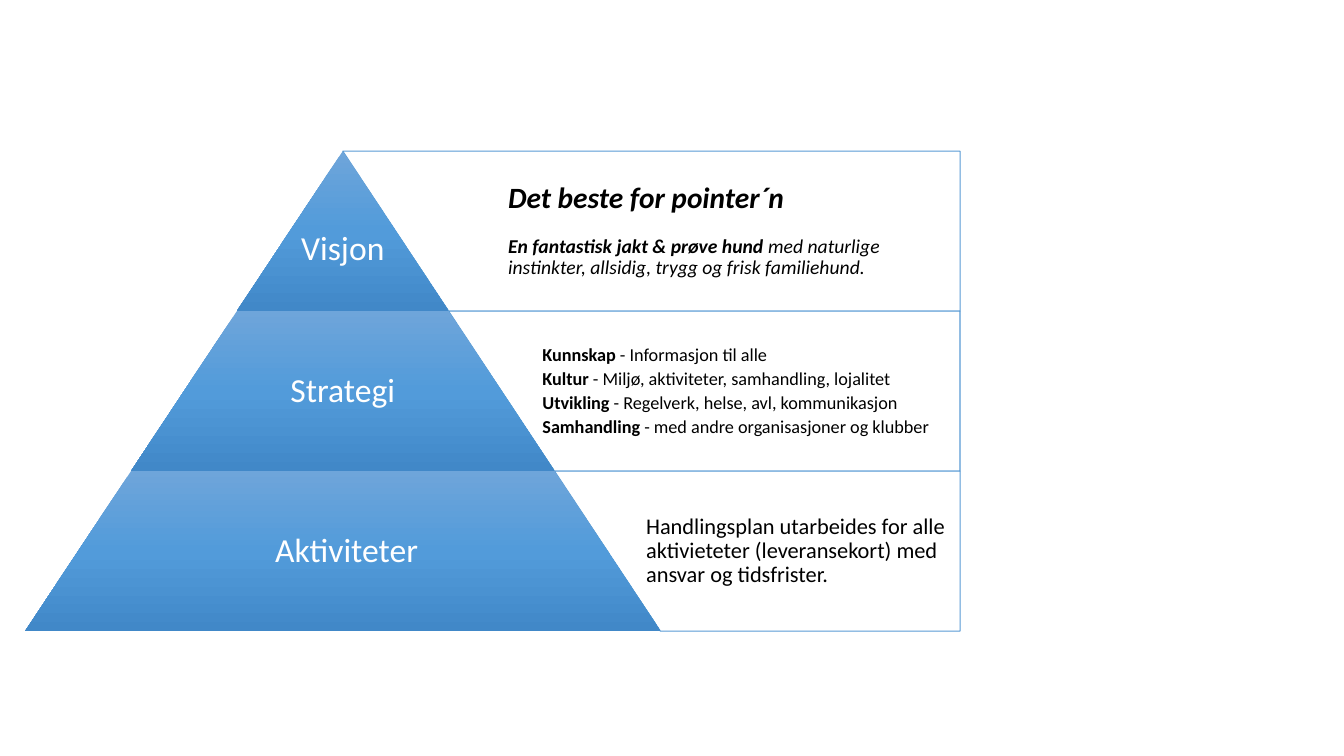
import copy
import dataclasses

import pptx
import pptx.dml.color
import pptx.enum.shapes
import pptx.enum.text
import pptx.oxml
import pptx.oxml.ns
import pptx.util


@dataclasses.dataclass(frozen=True)
class Theme:
    font: str = "Calibri"
    text: str = "000000"
    label: str = "FFFFFF"
    panel: str = "FFFFFF"
    panel_opacity: int = 89
    line: str = "599BD5"
    gradient: tuple = ("6EA5DA", "529BDA", "4188C8")
    label_size: int = 24
    vision_size: int = 21
    vision_detail_size: int = 14
    strategy_size: int = 13
    activity_size: int = 16


THEME = Theme()
LEFT, TOP = 0.25, 1.5
COLUMN, ROW = 1.05, 1.587
APEX = 3
RIGHT = 8.83


def across(columns):
    return pptx.util.Inches(LEFT + columns * COLUMN)


def down(rows):
    return pptx.util.Inches(TOP + rows * ROW)


def color(value):
    return pptx.dml.color.RGBColor.from_string(value)


def add_panel(page, row):
    edge = APEX + row
    builder = page.shapes.build_freeform(across(edge), down(row))
    corners = [(RIGHT, row), (RIGHT, row + 1), (edge + 1, row + 1)]
    builder.add_line_segments([(across(x), down(y)) for x, y in corners], close=True)
    panel = builder.convert_to_shape()
    panel.shadow.inherit = False
    panel.fill.solid()
    panel.fill.fore_color.rgb = color(THEME.panel)
    fill_color = panel._element.spPr.find(".//" + pptx.oxml.ns.qn("a:srgbClr"))
    alpha = fill_color.makeelement(pptx.oxml.ns.qn("a:alpha"), {"val": str(THEME.panel_opacity * 1000)})
    fill_color.append(alpha)
    panel.line.color.rgb = color(THEME.line)
    panel.line.width = pptx.util.Pt(0.75)


def add_tier(page, row):
    left, right = APEX - row - 1, APEX + row + 1
    tier = page.shapes.add_shape(
        pptx.enum.shapes.MSO_SHAPE.TRAPEZOID,
        across(left), down(row), across(right) - across(left), down(row + 1) - down(row),
    )
    tier.adjustments[0] = COLUMN / ROW
    tier.shadow.inherit = False
    tier.line.fill.background()
    tier.fill.gradient()
    tier.fill.gradient_angle = 270
    stop_list = tier._element.spPr.find(".//" + pptx.oxml.ns.qn("a:gsLst"))
    stop_list.insert(1, copy.deepcopy(stop_list[0]))
    for index, stop in enumerate(tier.fill.gradient_stops):
        stop.position = index / 2
        stop.color.rgb = color(THEME.gradient[index])


def add_text(page, row, left, right, inset, top_gap=0):
    box = page.shapes.add_textbox(
        across(left), down(row), across(right) - across(left), down(row + 1) - down(row)
    )
    frame = box.text_frame
    frame.word_wrap = True
    frame.vertical_anchor = pptx.enum.text.MSO_ANCHOR.MIDDLE
    frame.margin_left = frame.margin_right = frame.margin_bottom = pptx.util.Inches(inset)
    frame.margin_top = pptx.util.Inches(inset + top_gap)
    return frame


def fill_paragraph(para, parts, size, text_color, italic=False, before=0):
    para.line_spacing = 0.9
    para.space_before = pptx.util.Pt(before)
    para.font.name = THEME.font
    para.font.size = pptx.util.Pt(size)
    para.font.color.rgb = color(text_color)
    para.font.italic = italic
    for text, bold in parts:
        span = para.add_run()
        span.text = text
        span.font.bold = bold


def add_label(page, row, text, top_gap=0):
    frame = add_text(page, row, APEX - row - 1, APEX + row + 1, 0.03, top_gap)
    para = frame.paragraphs[0]
    fill_paragraph(para, [(text, False)], THEME.label_size, THEME.label)
    para.alignment = pptx.enum.text.PP_ALIGN.CENTER


def add_details(page, row, left, entries, indent=0):
    frame = add_text(page, row, left, RIGHT, 0.09)
    for index, (parts, size, italic, before) in enumerate(entries):
        para = frame.add_paragraph() if index else frame.paragraphs[0]
        fill_paragraph(para, parts, size, THEME.text, italic, before)
        if indent:
            properties = para._p.get_or_add_pPr()
            properties.set("marL", str(pptx.util.Inches(indent)))
            properties.set("indent", "0")


def main():
    deck = pptx.Presentation()
    deck.slide_width = pptx.util.Inches(13.33)
    deck.slide_height = pptx.util.Inches(7.5)
    page = deck.slides.add_slide(deck.slide_layouts[6])

    vision = [
        ([("Det beste for pointer´n", True)], THEME.vision_size, True, 0),
        ([("En fantastisk jakt & prøve hund ", True),
          ("med naturlige instinkter, allsidig, trygg og frisk familiehund.", False)],
         THEME.vision_detail_size, True, 15.4),
    ]
    strategies = [
        ("Kunnskap ", "- Informasjon til alle"),
        ("Kultur ", "- Miljø, aktiviteter, samhandling, lojalitet"),
        ("Utvikling ", "- Regelverk, helse, avl, kommunikasjon"),
        ("Samhandling ", "- med andre organisasjoner og klubber"),
    ]
    strategy = [
        ([(name, True), (detail, False)], THEME.strategy_size, False, 3.1)
        for name, detail in strategies
    ]
    activity = [
        ([("Handlingsplan utarbeides for alle aktivieteter (leveransekort) "
           "med ansvar og tidsfrister.", False)], THEME.activity_size, False, 3.1),
    ]
    tiers = [
        ("Visjon", 0.36, 4, vision, 0.5),
        ("Strategi", 0, 4.8, strategy, 0),
        (" Aktiviteter", 0, 5.78, activity, 0),
    ]
    for row, (label, top_gap, left, entries, indent) in enumerate(tiers):
        add_panel(page, row)
        add_details(page, row, left, entries, indent)
        add_tier(page, row)
        add_label(page, row, label, top_gap)

    deck.save("out.pptx")


if __name__ == "__main__":
    main()
